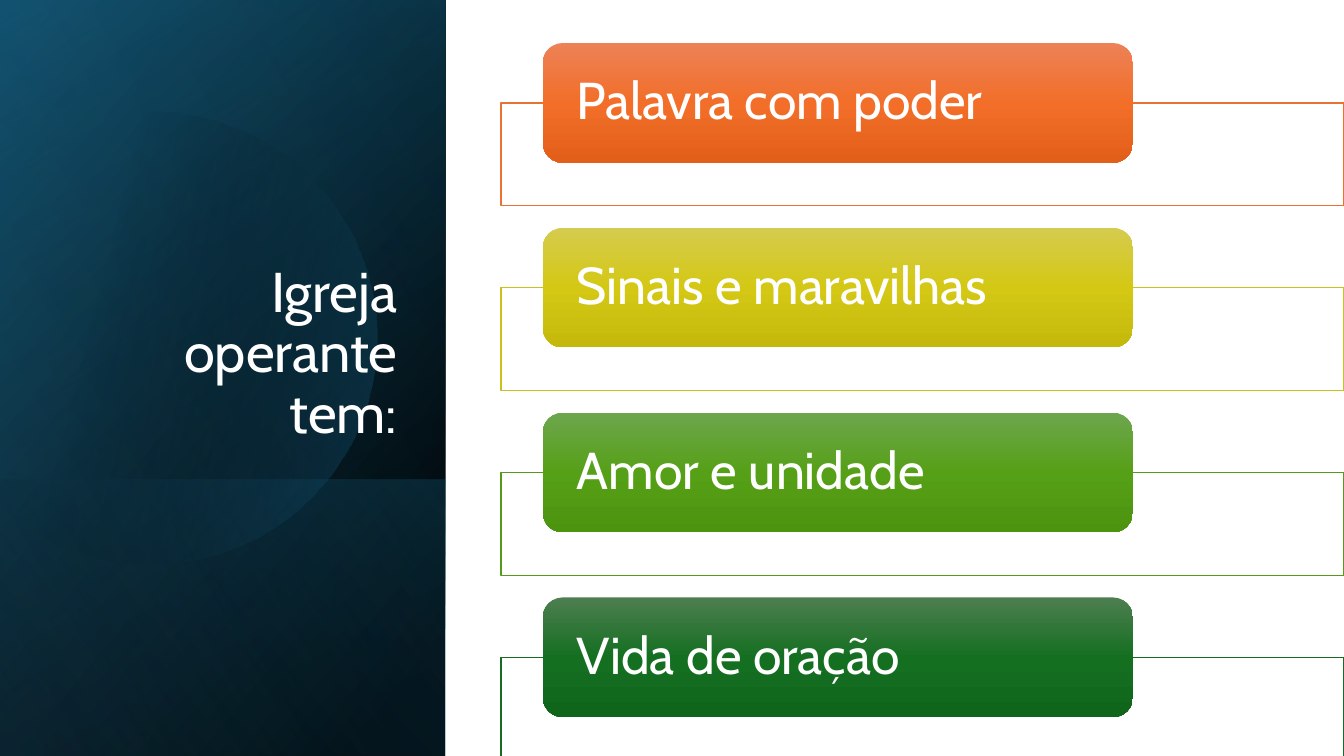
from math import acos, cos, sin

from pptx import Presentation
from pptx.dml.color import RGBColor
from pptx.enum.shapes import MSO_SHAPE as SHAPE
from pptx.enum.text import MSO_ANCHOR as ANCHOR, PP_ALIGN as ALIGN
from pptx.oxml import parse_xml
from pptx.oxml.ns import nsdecls, qn
from pptx.util import Pt

PX = 9525  # EMU per px; the slide is 1280 x 720 px
FONT = "Cabin"
COLORS = {
    "white": "FFFFFF", "black": "000000", "navy": "104862",
    "teal": "156082", "sky": "46B1E1",
}
# Label, outline colour, card gradient from top to bottom
CARDS = [
    ("Palavra com poder", "E97132", ("ED8257", "F26E29", "E25F1A")),
    ("Sinais e maravilhas", "CBC11E", ("D5CB4E", "D4C815", "C4B90B")),
    ("Amor e unidade", "56991D", ("6DA64E", "56A017", "4C930F")),
    ("Vida de oração", "196B24", ("4D7E50", "156F21", "0F661B")),
]


def px(*lengths):
    return [round(n * PX) for n in lengths]


def set_gradient(sp, angle, stops):
    """Fill sp with stops of (position %, hex colour, opacity %)."""
    gs = "".join(
        f'<a:gs pos="{pos * 1000}"><a:srgbClr val="{color}">'
        f'<a:alpha val="{alpha * 1000}"/></a:srgbClr></a:gs>'
        for pos, color, alpha in stops)
    sp.fill.background()
    no_fill = sp._element.spPr.find(qn("a:noFill"))
    no_fill.getparent().replace(no_fill, parse_xml(
        f'<a:gradFill {nsdecls("a")} rotWithShape="1"><a:gsLst>{gs}</a:gsLst>'
        f'<a:lin ang="{angle * 60000}" scaled="0"/></a:gradFill>'))
    sp.line.fill.background()
    sp.shadow.inherit = False


def set_text(tf, text, size, align, anchor):
    tf.word_wrap = True
    tf.vertical_anchor = anchor
    p = tf.paragraphs[0]
    p.text = text
    p.alignment = align
    p.line_spacing = 0.9
    p.font.name = FONT
    p.font.size = Pt(size)
    p.font.color.rgb = RGBColor.from_string(COLORS["white"])


def add_layer(slide, box, angle, stops):
    sp = slide.shapes.add_shape(SHAPE.RECTANGLE, *px(*box))
    set_gradient(sp, angle, stops)


def add_disc(slide, cx, cy, radius, edge):
    """Draw a disc cut off at the vertical line x = edge."""
    limit, steps = acos((edge - cx) / radius), 120
    angles = [limit * (2 * i / steps - 1) for i in range(steps + 1)]
    points = [(cx + radius * cos(a), cy + radius * sin(a)) for a in angles]
    builder = slide.shapes.build_freeform(*points[0], scale=PX)
    builder.add_line_segments(points[1:], close=True)
    set_gradient(builder.convert_to_shape(), 14,
                 [(29, COLORS["black"], 0), (100, COLORS["teal"], 43)])


def add_title_panel(slide, x, y, w, h):
    c = COLORS
    panel, band_h = (x, y, w, h), 263
    # Dark gradient layers
    add_layer(slide, panel, 220, [(8, c["black"], 100), (100, c["navy"], 100)])
    add_layer(slide, panel, 240, [(0, c["black"], 0), (99, c["teal"], 46)])
    add_layer(slide, (x, y + h - band_h, w, band_h), 140,
              [(2, c["teal"], 29), (100, c["black"], 30)])
    add_disc(slide, x + 143, y + 322, 216, x)
    add_layer(slide, panel, 150, [(0, c["black"], 0), (99, c["sky"], 11)])
    # Title, moved in front of the layers
    title = slide.shapes.title
    title.left, title.top, title.width, title.height = px(
        x + 61, y + 177, 327, 252)
    set_text(title.text_frame, "Igreja operante tem:", 40,
             ALIGN.RIGHT, ANCHOR.BOTTOM)
    slide.shapes._spTree.append(title._element)


def add_card(slide, x, y, w, label, outline, shades):
    # Outlined box behind
    frame = slide.shapes.add_shape(SHAPE.RECTANGLE, *px(x, y + 57, w, 98))
    frame.fill.solid()
    frame.fill.fore_color.rgb = RGBColor.from_string(COLORS["white"])
    frame.line.color.rgb = RGBColor.from_string(outline)
    frame.line.width = Pt(1)
    frame.shadow.inherit = False
    # Rounded card with its label
    card = slide.shapes.add_shape(SHAPE.ROUNDED_RECTANGLE,
                                  *px(x + 40, y, 562, 114))
    set_gradient(card, 90, [(50 * i, s, 100) for i, s in enumerate(shades)])
    tf = card.text_frame
    tf.margin_left = tf.margin_right = 27 * PX
    tf.margin_top = tf.margin_bottom = 0
    set_text(tf, label, 37, ALIGN.LEFT, ANCHOR.MIDDLE)


def add_card_list(slide, x, y, w, pitch):
    for i, card in enumerate(CARDS):
        add_card(slide, x, y + i * pitch, w, *card)


def main():
    prs = Presentation()
    prs.slide_width, prs.slide_height = px(1280, 720)
    slide = prs.slides.add_slide(prs.slide_layouts[5])
    add_title_panel(slide, 0, 0, 424, 720)
    add_card_list(slide, 477, 41, 803, 176)
    prs.save("out.pptx")


if __name__ == "__main__":
    main()
